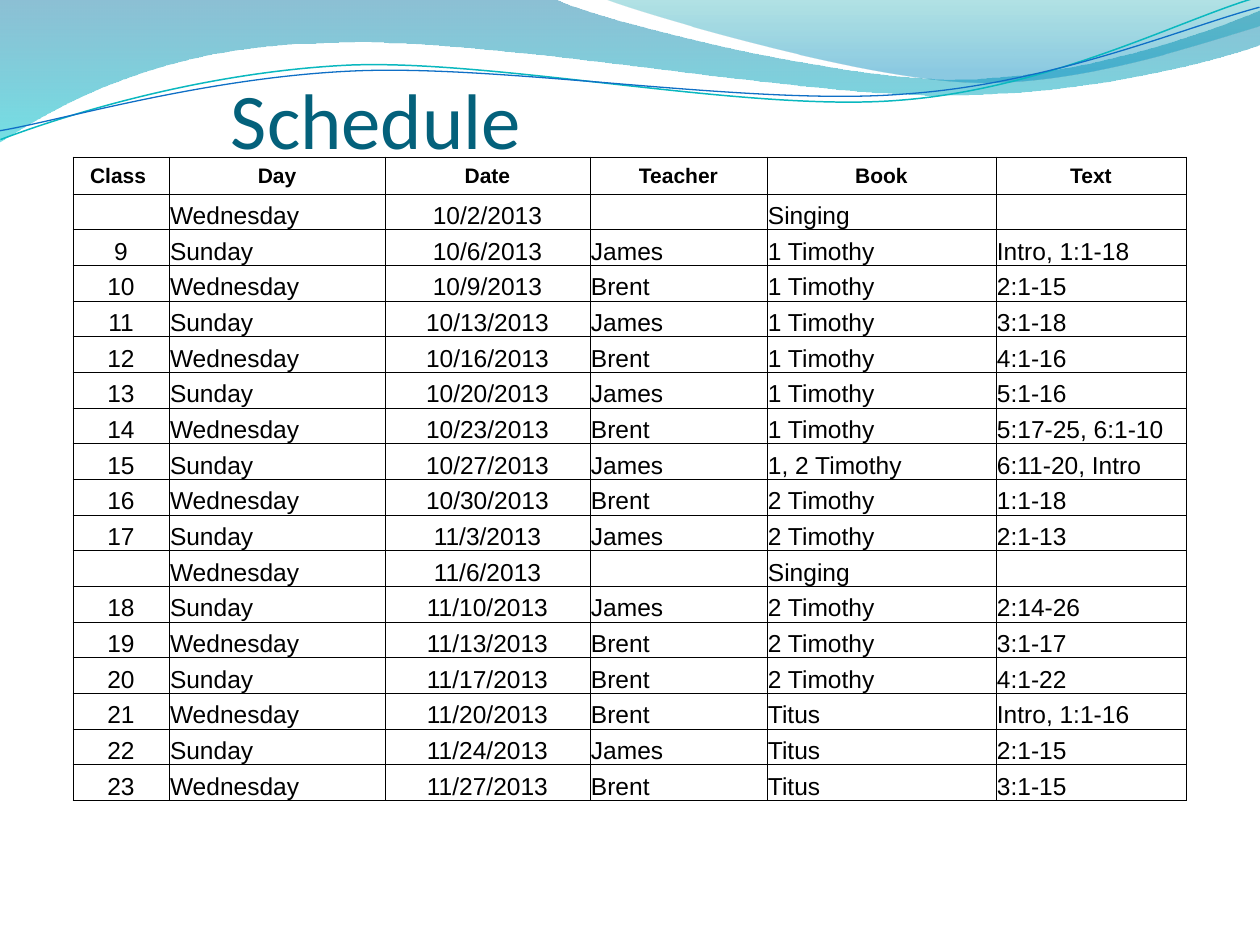
from lxml import etree
from pptx import Presentation
from pptx.dml.color import RGBColor
from pptx.enum.text import MSO_ANCHOR, PP_ALIGN
from pptx.oxml.ns import qn
from pptx.util import Emu, Pt

MIDDLE, BOTTOM = MSO_ANCHOR.MIDDLE, MSO_ANCHOR.BOTTOM
LEFT, CENTER = PP_ALIGN.LEFT, PP_ALIGN.CENTER

BLACK = RGBColor(0x00, 0x00, 0x00)
TITLE_TEAL = RGBColor(0x04, 0x61, 0x7B)
DEEP_BLUE = RGBColor(0x00, 0x74, 0xA1)
AQUA = RGBColor(0x00, 0xC6, 0xCF)
TEAL = RGBColor(0x00, 0xA1, 0xA9)
SKY = RGBColor(0x00, 0x8B, 0xBF)
LINE_TEAL = RGBColor(0x0A, 0xB8, 0xBF)
LINE_BLUE = RGBColor(0x0F, 0x6F, 0xC6)

TITLE = "Schedule"
HEADINGS = ("Class ", "Day", "Date", "Teacher", "Book", "Text")
LESSONS = [
    ("", "Wednesday", "10/2/2013", "", "Singing", ""),
    ("9", "Sunday", "10/6/2013", "James", "1 Timothy", "Intro, 1:1-18"),
    ("10", "Wednesday", "10/9/2013", "Brent", "1 Timothy", "2:1-15"),
    ("11", "Sunday", "10/13/2013", "James", "1 Timothy", "3:1-18"),
    ("12", "Wednesday", "10/16/2013", "Brent", "1 Timothy", "4:1-16"),
    ("13", "Sunday", "10/20/2013", "James", "1 Timothy", "5:1-16"),
    ("14", "Wednesday", "10/23/2013", "Brent", "1 Timothy", "5:17-25, 6:1-10"),
    ("15", "Sunday", "10/27/2013", "James", "1, 2 Timothy", "6:11-20, Intro"),
    ("16", "Wednesday", "10/30/2013", "Brent", "2 Timothy", "1:1-18"),
    ("17", "Sunday", "11/3/2013", "James", "2 Timothy", "2:1-13"),
    ("", "Wednesday", "11/6/2013", "", "Singing", ""),
    ("18", "Sunday", "11/10/2013", "James", "2 Timothy", "2:14-26"),
    ("19", "Wednesday", "11/13/2013", "Brent", "2 Timothy", "3:1-17"),
    ("20", "Sunday", "11/17/2013", "Brent", "2 Timothy", "4:1-22"),
    ("21", "Wednesday", "11/20/2013", "Brent", "Titus", "Intro, 1:1-16"),
    ("22", "Sunday", "11/24/2013", "James", "Titus", "2:1-15"),
    ("23", "Wednesday", "11/27/2013", "Brent", "Titus", "3:1-15"),
]
COLUMN_WIDTHS = (96, 216, 205, 177, 229, 190)
COLUMN_ALIGNS = (CENTER, LEFT, CENTER, LEFT, LEFT, LEFT)
TABLE_LEFT, TABLE_TOP = 73, 157
HEADING_HEIGHT, LESSONS_HEIGHT = 37, 607

WAVES = [
    ((0, 0),
     [[(554, -1)],
      [(600, 21), (837, 79), (955, 79)],
      [(1075, 79), (1207, 33), (1260, 11)],
      [(1261, 45)],
      [(1233, 55), (1096, 96), (940, 95)],
      [(784, 95), (481, 35), (324, 43)],
      [(163, 45), (58, 105), (-1, 142)]],
     [(0, DEEP_BLUE, 45), (1, AQUA, 55)]),
    ((604, -1),
     [[(641, 14), (859, 78), (969, 82)],
      [(1079, 87), (1211, 40), (1260, 26)],
      [(1260, 0)]],
     [(0, TEAL, 30), (0.8, SKY, 45)]),
]
RIPPLES = [
    ((-2, 110),
     [[(59, 90), (200, 52), (350, 52)],
      [(498, 53), (745, 118), (897, 113)],
      [(1048, 109), (1184, 45), (1260, 27)]],
     LINE_TEAL, 0.85),
    ((-2, 101),
     [[(58, 94), (207, 57), (357, 58)],
      [(508, 59), (751, 112), (902, 107)],
      [(1052, 104), (1187, 53), (1262, 37)]],
     LINE_BLUE, 0.75),
]
RIPPLE_TILT = 357.3


def px(length):
    return Emu(round(length * 914400 / 126))


def add_outline(slide, start, segments, close):
    corners = [(px(x), px(y)) for segment in segments for x, y in segment]
    builder = slide.shapes.build_freeform(px(start[0]), px(start[1]))
    builder.add_line_segments(corners, close=close)
    outline = builder.convert_to_shape()
    outline.shadow.inherit = False
    steps = iter(list(outline.element.iter(qn("a:lnTo"))))
    for segment in segments:
        first, *others = [next(steps) for _ in segment]
        if others:
            curve = etree.Element(qn("a:cubicBezTo"))
            first.addprevious(curve)
            for step in (first, *others):
                curve.append(step[0])
                step.getparent().remove(step)
    return outline


def add_wave(slide, start, segments, stops):
    wave = add_outline(slide, start, segments, True)
    wave.line.fill.background()
    wave.fill.gradient()
    wave.fill.gradient_angle = 270
    for stop, (position, color, _) in zip(wave.fill.gradient_stops, stops):
        stop.position = position
        stop.color.rgb = color
    for tint, (_, _, opacity) in zip(wave.element.iter(qn("a:srgbClr")), stops):
        etree.SubElement(tint, qn("a:alpha"), val=str(opacity * 1000))


def add_ripple(slide, start, segments, color, width):
    ripple = add_outline(slide, start, segments, False)
    ripple.rotation = RIPPLE_TILT
    ripple.fill.background()
    ripple.line.color.rgb = color
    ripple.line.width = Pt(width)


def format_font(font, name, size, color, bold=False):
    font.name, font.size, font.bold = name, Pt(size), bold
    font.color.rgb = color


def add_title(slide):
    frame = slide.shapes.add_textbox(px(231), px(63), px(1134), px(102)).text_frame
    frame.word_wrap = True
    frame.vertical_anchor = BOTTOM
    frame.margin_left = frame.margin_right = frame.margin_bottom = 0
    frame.margin_top = px(6)
    frame.text = TITLE
    format_font(frame.paragraphs[0].runs[0].font, "Calibri", 45, TITLE_TEAL)


def add_borders(cell):
    properties = cell._tc.get_or_add_tcPr()
    for index, side in enumerate(("a:lnL", "a:lnR", "a:lnT", "a:lnB")):
        border = etree.Element(qn(side), w=str(Pt(0.5)))
        fill = etree.SubElement(border, qn("a:solidFill"))
        etree.SubElement(fill, qn("a:srgbClr"), val=str(BLACK))
        properties.insert(index, border)


def fill_cell(cell, text, align, heading):
    size = 12 if heading else 14
    cell.margin_left = cell.margin_right = cell.margin_top = px(1)
    cell.margin_bottom = 0
    cell.vertical_anchor = MIDDLE if heading else BOTTOM
    cell.fill.background()
    add_borders(cell)
    paragraph = cell.text_frame.paragraphs[0]
    paragraph.alignment = CENTER if heading else align
    if text:
        paragraph.text = text
        format_font(paragraph.runs[0].font, "Arial", size, BLACK, heading)
    else:
        etree.SubElement(paragraph._p, qn("a:endParaRPr"), sz=str(size * 100))


def add_schedule(slide):
    rows = [HEADINGS] + LESSONS
    schedule = slide.shapes.add_table(
        len(rows), len(HEADINGS), px(TABLE_LEFT), px(TABLE_TOP),
        px(sum(COLUMN_WIDTHS)), px(HEADING_HEIGHT + LESSONS_HEIGHT)).table
    schedule.first_row = schedule.horz_banding = False
    for column, width in zip(schedule.columns, COLUMN_WIDTHS):
        column.width = px(width)
    for r, texts in enumerate(rows):
        heading = r == 0
        schedule.rows[r].height = px(
            HEADING_HEIGHT if heading else LESSONS_HEIGHT / len(LESSONS))
        for c, (text, align) in enumerate(zip(texts, COLUMN_ALIGNS)):
            fill_cell(schedule.cell(r, c), text, align, heading)


def main():
    deck = Presentation()
    deck.slide_width, deck.slide_height = px(1260), px(945)
    slide = deck.slides.add_slide(deck.slide_layouts[6])
    for wave in WAVES:
        add_wave(slide, *wave)
    for ripple in RIPPLES:
        add_ripple(slide, *ripple)
    add_title(slide)
    add_schedule(slide)
    deck.save("out.pptx")


if __name__ == "__main__":
    main()
